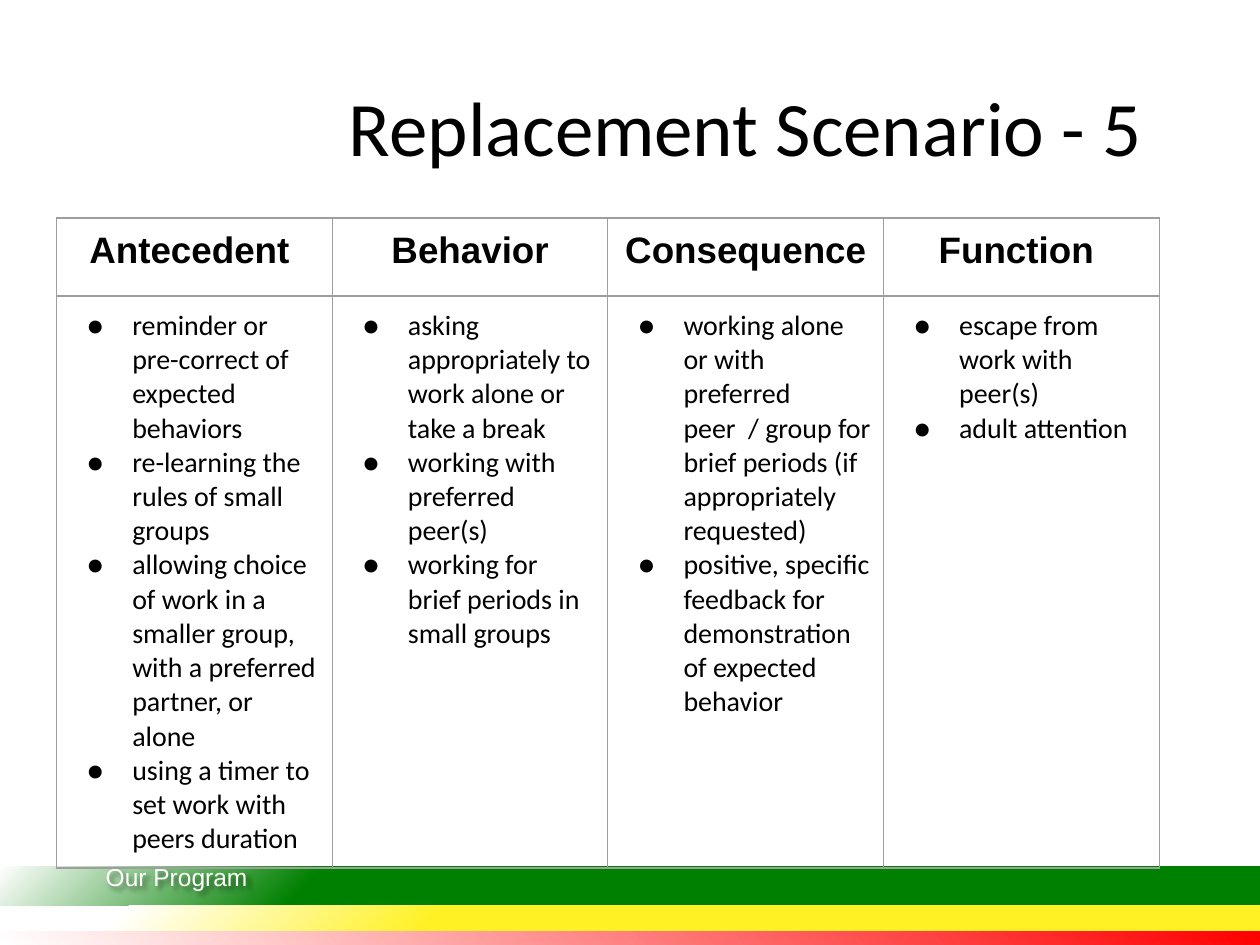
"""Build the Replacement Scenario slide: title, four-column table and tricolour footer."""
from dataclasses import dataclass

from pptx import Presentation
from pptx.dml.color import RGBColor
from pptx.enum.shapes import MSO_SHAPE
from pptx.enum.text import MSO_ANCHOR, PP_ALIGN
from pptx.oxml import parse_xml
from pptx.oxml.ns import nsdecls, qn
from pptx.util import Inches, Pt


@dataclass(frozen=True)
class Theme:
    ink: str = "000000"
    paper: str = "FFFFFF"
    border: str = "9E9E9E"
    red: str = "FF0000"
    green: str = "008000"
    yellow: str = "FFF123"
    head_font: str = "Arial"
    body_font: str = "Calibri"
    title_size: float = 44
    head_size: float = 21
    body_size: float = 16
    footer_size: float = 14
    border_width: float = 0.75


T = Theme()
W, H = 10, 7.5
TITLE = "Replacement Scenario - 5"
FOOTER = "Our Program"
COLUMNS = [
    ("Antecedent ", [
        "reminder or pre-correct of expected behaviors",
        "re-learning the rules of small groups",
        "allowing choice of work in a smaller group, with a preferred partner, or alone",
        "using a timer to set work with peers duration",
    ]),
    ("Behavior", [
        "asking appropriately to work alone or take a break",
        "working with preferred peer(s)",
        "working for brief periods in small groups",
    ]),
    ("Consequence", [
        "working alone or with preferred peer  / group for brief periods (if appropriately requested)",
        "positive, specific feedback for demonstration of expected behavior",
    ]),
    ("Function ", [
        "escape from work with peer(s)",
        "adult attention",
    ]),
]
TABLE_LEFT, TABLE_TOP, TABLE_WIDTH = 0.45, 1.73, 8.75
ROW_HEIGHTS = (0.62, 4.54)
BAR_TOP = 6.88
BARS = [
    (0.31, [(0, T.green), (75, T.green), (100, T.paper)], 'l="100000" t="100000"'),
    (0.2, [(0, T.yellow), (65, T.yellow), (90, T.paper), (100, T.paper)], 'l="100000" t="100000"'),
    (0.12, [(0, T.red), (100, T.paper)], 'l="100000" b="100000"'),
]


def add_run(p, text, font, size, color=T.ink, bold=False):
    r = p.add_run()
    r.text = text
    r.font.name, r.font.size, r.font.bold = font, Pt(size), bold
    r.font.color.rgb = RGBColor.from_string(color)


def add_text(s, box, text, font, size, color=T.ink, anchor=MSO_ANCHOR.TOP):
    sp = s.shapes.add_textbox(*map(Inches, box))
    tf = sp.text_frame
    tf.word_wrap, tf.vertical_anchor = True, anchor
    add_run(tf.paragraphs[0], text, font, size, color)
    return sp


def add_bar(s, top, height, stops, focus):
    sp = s.shapes.add_shape(MSO_SHAPE.RECTANGLE, 0, Inches(top), Inches(W), Inches(height))
    sp.shadow.inherit = False
    sp.line.fill.background()
    sp.fill.background()
    gs = "".join(f'<a:gs pos="{pos * 1000}"><a:srgbClr val="{c}"/></a:gs>' for pos, c in stops)
    spPr = sp._element.spPr
    spPr.replace(spPr.find(qn("a:noFill")), parse_xml(
        f'<a:gradFill {nsdecls("a")} rotWithShape="1"><a:gsLst>{gs}</a:gsLst>'
        f'<a:path path="circle"><a:fillToRect {focus}/></a:path></a:gradFill>'))


def add_footer(s):
    top = BAR_TOP
    for height, stops, focus in BARS:
        add_bar(s, top, height, stops, focus)
        top += height
    sp = add_text(s, (0.74, 6.79, 1.92, 0.4), FOOTER, T.head_font, T.footer_size, T.paper)
    sp._element.spPr.append(parse_xml(
        f'<a:effectLst {nsdecls("a")}><a:outerShdw blurRad="38100" dist="38100" dir="2700000">'
        f'<a:srgbClr val="{T.ink}"><a:alpha val="43000"/></a:srgbClr></a:outerShdw></a:effectLst>'))


def style_cell(cell):
    cell.margin_left = cell.margin_right = cell.margin_top = cell.margin_bottom = Inches(0.1)
    tcPr = cell._tc.get_or_add_tcPr()
    for side in "LRTB":
        tcPr.append(parse_xml(
            f'<a:ln{side} {nsdecls("a")} w="{Pt(T.border_width)}"><a:solidFill>'
            f'<a:srgbClr val="{T.border}"/></a:solidFill></a:ln{side}>'))
    cell.fill.background()


def add_bullet(p):
    pPr = p._p.get_or_add_pPr()
    pPr.set("marL", str(Inches(0.5)))
    pPr.set("indent", str(Inches(-0.36)))
    for xml in (f'<a:buClr {nsdecls("a")}><a:srgbClr val="{T.ink}"/></a:buClr>',
                f'<a:buFont {nsdecls("a")} typeface="{T.body_font}"/>',
                f'<a:buChar {nsdecls("a")} char="●"/>'):
        pPr.append(parse_xml(xml))


def add_scenario_table(s):
    tbl = s.shapes.add_table(2, len(COLUMNS), Inches(TABLE_LEFT), Inches(TABLE_TOP),
                             Inches(TABLE_WIDTH), Inches(sum(ROW_HEIGHTS))).table
    tbl.first_row = tbl.horz_banding = False
    for row, height in zip(tbl.rows, ROW_HEIGHTS):
        row.height = Inches(height)
    for col, (heading, items) in enumerate(COLUMNS):
        head, body = tbl.cell(0, col), tbl.cell(1, col)
        style_cell(head)
        style_cell(body)
        p = head.text_frame.paragraphs[0]
        p.alignment = PP_ALIGN.CENTER
        add_run(p, heading, T.head_font, T.head_size, bold=True)
        tf = body.text_frame
        for i, item in enumerate(items):
            p = tf.add_paragraph() if i else tf.paragraphs[0]
            add_bullet(p)
            add_run(p, item, T.body_font, T.body_size)


def main():
    prs = Presentation()
    prs.slide_width, prs.slide_height = Inches(W), Inches(H)
    s = prs.slides.add_slide(prs.slide_layouts[6])
    add_footer(s)
    sp = add_text(s, (2.67, 0.54, 6.99, 1.01), TITLE, T.body_font, T.title_size,
                  anchor=MSO_ANCHOR.MIDDLE)
    sp.text_frame.paragraphs[0].line_spacing = 0.9
    add_scenario_table(s)
    prs.save("out.pptx")


if __name__ == "__main__":
    main()
